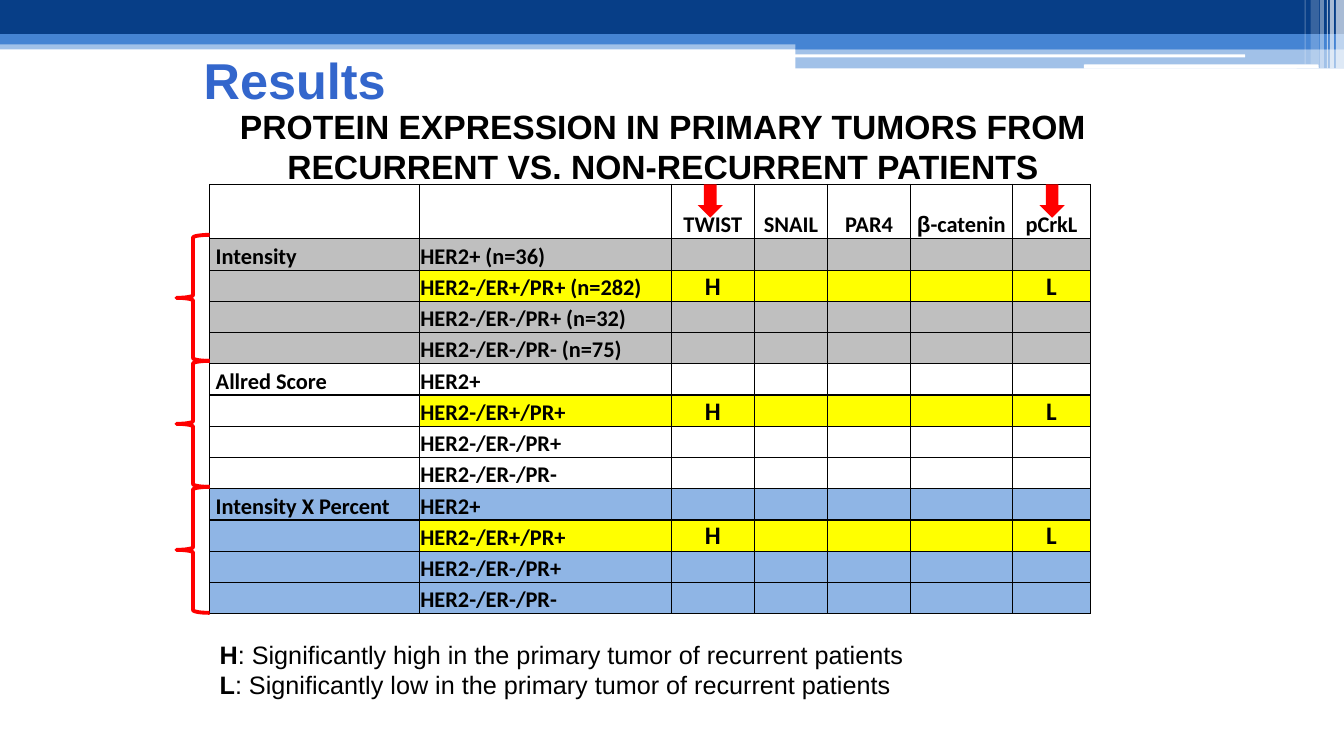
from lxml.etree import SubElement
from pptx import Presentation
from pptx.dml.color import RGBColor
from pptx.enum.shapes import MSO_SHAPE
from pptx.enum.text import MSO_ANCHOR, MSO_AUTO_SIZE, PP_ALIGN
from pptx.oxml.ns import qn
from pptx.util import Inches, Pt

NAVY = RGBColor(0x07, 0x3E, 0x87)
BLUE = RGBColor(0x45, 0x84, 0xD3)
TITLE_BLUE = RGBColor(0x33, 0x66, 0xCC)
LIGHT_BLUE = RGBColor(0x8F, 0xB5, 0xE5)
GRAY = RGBColor(0xBF, 0xBF, 0xBF)
YELLOW = RGBColor(0xFF, 0xFF, 0x00)
RED = RGBColor(0xFF, 0x00, 0x00)
WHITE = RGBColor(0xFF, 0xFF, 0xFF)
BLACK = RGBColor(0x00, 0x00, 0x00)

COLUMN_WIDTHS = [2.08, 2.5, 0.82, 0.73, 0.82, 1.01, 0.78]
HEADER_HEIGHT, ROW_HEIGHT = 0.54, 0.31
PROTEINS = ["TWIST", "SNAIL", "PAR4", "β-catenin", "pCrkL"]
SUBTYPES = ["HER2+", "HER2-/ER+/PR+", "HER2-/ER-/PR+", "HER2-/ER-/PR-"]
PATIENT_COUNTS = [36, 282, 32, 75]
MEASURES = [("Intensity", GRAY), ("Allred Score", WHITE), ("Intensity X Percent", LIGHT_BLUE)]
SIGNIFICANT_SUBTYPE = 1
SIGNIFICANT_RESULTS = ["H", "", "", "", "L"]


def set_font(font, name, size, color=BLACK, bold=True):
    """Set the typeface, point size, colour and weight of a font."""
    font.name, font.size, font.bold = name, Pt(size), bold
    font.color.rgb = color


def add_filled_shape(slide, kind, box, color, opacity=100):
    """Add a borderless shape in a left, top, width, height box."""
    filled = slide.shapes.add_shape(kind, *map(Inches, box))
    filled.shadow.inherit = False
    filled.line.fill.background()
    filled.fill.solid()
    filled.fill.fore_color.rgb = color
    if opacity < 100:
        tint = filled.fill._xPr.find(qn("a:solidFill"))[0]
        SubElement(tint, qn("a:alpha"), val=str(opacity * 1000))


def add_banner(slide, left, top, width):
    """Draw the layered blue band and its white accents."""
    right = left + width
    for y, height, color, opacity in [(0.4, 0.09, BLUE, 50), (0, 0.34, NAVY, 100), (0.34, 0.1, BLUE, 100)]:
        add_filled_shape(slide, MSO_SHAPE.RECTANGLE, (left, top + y, width, height), color, opacity)
    for y, height, opacity in [(0.39, 0.1, 100), (0.48, 0.2, 50)]:
        add_filled_shape(slide, MSO_SHAPE.RECTANGLE, (right - 5.44, top + y, 5.44, height), BLUE, opacity)
    for x, y, length, height in [(7.88, 0.54, 4.47, 0.03), (10.75, 0.64, 2.33, 0.04)]:
        add_filled_shape(slide, MSO_SHAPE.ROUNDED_RECTANGLE, (left + x, top + y, length, height), WHITE)
    for inset, thickness, height, opacity in [
        (0.08, 0.08, 0.68, 65), (0.14, 0.04, 0.68, 65), (0.17, 0.01, 0.68, 60),
        (0.24, 0.04, 0.68, 40), (0.33, 0.08, 0.64, 20), (0.39, 0.01, 0.64, 30),
    ]:
        stripe = (right - inset, top, thickness, height)
        add_filled_shape(slide, MSO_SHAPE.RECTANGLE, stripe, WHITE, opacity)


def add_title(slide, left, top, width, height):
    """Place the slide title in its placeholder."""
    title = slide.shapes.title
    title.left, title.top, title.width, title.height = map(Inches, (left, top, width, height))
    frame = title.text_frame
    frame.text = "Results"
    frame.auto_size = MSO_AUTO_SIZE.NONE
    frame.vertical_anchor = MSO_ANCHOR.BOTTOM
    frame.margin_bottom = 0
    frame.paragraphs[0].alignment = PP_ALIGN.LEFT
    set_font(frame.paragraphs[0].font, "Arial", 36, TITLE_BLUE)


def add_heading(slide, left, top, width, height):
    """Add the centred heading above the table."""
    frame = slide.shapes.add_textbox(*map(Inches, (left, top, width, height))).text_frame
    frame.word_wrap = True
    heading = frame.paragraphs[0]
    heading.text = "PROTEIN EXPRESSION IN PRIMARY TUMORS FROM RECURRENT VS. NON-RECURRENT PATIENTS"
    heading.alignment = PP_ALIGN.CENTER
    set_font(heading.font, "Arial", 24)


def add_legend(slide, left, top, width, height):
    """Explain the letters used in the table."""
    frame = slide.shapes.add_textbox(*map(Inches, (left, top, width, height))).text_frame
    frame.word_wrap = True
    for index, (letter, level) in enumerate([("H", "high"), ("L", "low")]):
        entry = frame.add_paragraph() if index else frame.paragraphs[0]
        set_font(entry.font, "Arial", 18, bold=False)
        entry.add_run().text = letter
        entry.runs[0].font.bold = True
        entry.add_run().text = f": Significantly {level} in the primary tumor of recurrent patients"


def format_cell(cell, text, color, column):
    """Write one table cell with its borders, fill and font."""
    properties = cell._tc.get_or_add_tcPr()
    for side in ("lnL", "lnR", "lnT", "lnB"):
        border = SubElement(properties, qn(f"a:{side}"), w=str(Pt(1)))
        SubElement(SubElement(border, qn("a:solidFill")), qn("a:srgbClr"), val=str(BLACK))
    if color is None:
        cell.fill.background()
    else:
        cell.fill.solid()
        cell.fill.fore_color.rgb = color
    cell.vertical_anchor = MSO_ANCHOR.BOTTOM
    cell.margin_left = Inches(0.01 if column else 0.06)
    cell.margin_right = cell.margin_top = Inches(0.01)
    cell.margin_bottom = 0
    paragraph = cell.text_frame.paragraphs[0]
    paragraph.alignment = PP_ALIGN.CENTER if column > 1 else PP_ALIGN.LEFT
    set_font(paragraph.font, "Calibri", 18 if text in ("H", "L") else 16)
    if text.startswith("β"):
        paragraph.add_run().text = "β"
        paragraph.runs[0].font.name = "Arial"
        text = text[1:]
    if text:
        paragraph.add_run().text = text


def expression_rows():
    """Return the texts and fills of every table row."""
    rows = [(["", "", *PROTEINS], [None] * 7)]
    for measure, color in MEASURES:
        for index, subtype in enumerate(SUBTYPES):
            significant = index == SIGNIFICANT_SUBTYPE
            label = "" if index else measure
            if measure == "Intensity":
                subtype = f"{subtype} (n={PATIENT_COUNTS[index]})"
            results = SIGNIFICANT_RESULTS if significant else [""] * 5
            rows.append(([label, subtype, *results], [color] + [YELLOW if significant else color] * 6))
    return rows


def add_expression_table(slide, left, top, width, height):
    """Add the protein expression table with its arrows and braces."""
    rows = expression_rows()
    table = slide.shapes.add_table(
        len(rows), len(COLUMN_WIDTHS), *map(Inches, (left, top, width, height))).table
    table.first_row = table.horz_banding = False
    for column, column_width in zip(table.columns, COLUMN_WIDTHS):
        column.width = Inches(column_width)
    for row_index, (texts, colors) in enumerate(rows):
        table.rows[row_index].height = Inches(ROW_HEIGHT if row_index else HEADER_HEIGHT)
        for column_index, (text, color) in enumerate(zip(texts, colors)):
            format_cell(table.cell(row_index, column_index), text, color, column_index)
    for arrow_offset in (4.84, 8.23):
        add_filled_shape(slide, MSO_SHAPE.DOWN_ARROW, (left + arrow_offset, top, 0.25, 0.33), RED)
    brace_height = 1.25
    for index in range(len(MEASURES)):
        brace_top = top + 0.5 + index * brace_height
        brace = slide.shapes.add_shape(
            MSO_SHAPE.LEFT_BRACE, *map(Inches, (left - 0.33, brace_top, 0.33, brace_height)))
        brace.shadow.inherit = False
        brace.fill.background()
        brace.line.color.rgb = RED
        brace.line.width = Pt(2.75)


def main():
    """Build and save the results slide."""
    presentation = Presentation()
    presentation.slide_width, presentation.slide_height = Inches(13.33), Inches(7.5)
    slide = presentation.slides.add_slide(presentation.slide_layouts[5])
    add_banner(slide, 0, 0, 13.33)
    add_title(slide, 1.92, 0.42, 5.25, 0.67)
    add_heading(slide, 1.7, 1, 9.75, 0.91)
    add_expression_table(slide, 2.08, 1.83, 8.74, 4.26)
    add_legend(slide, 2.08, 6.29, 9.58, 0.71)
    presentation.save("out.pptx")


if __name__ == "__main__":
    main()
